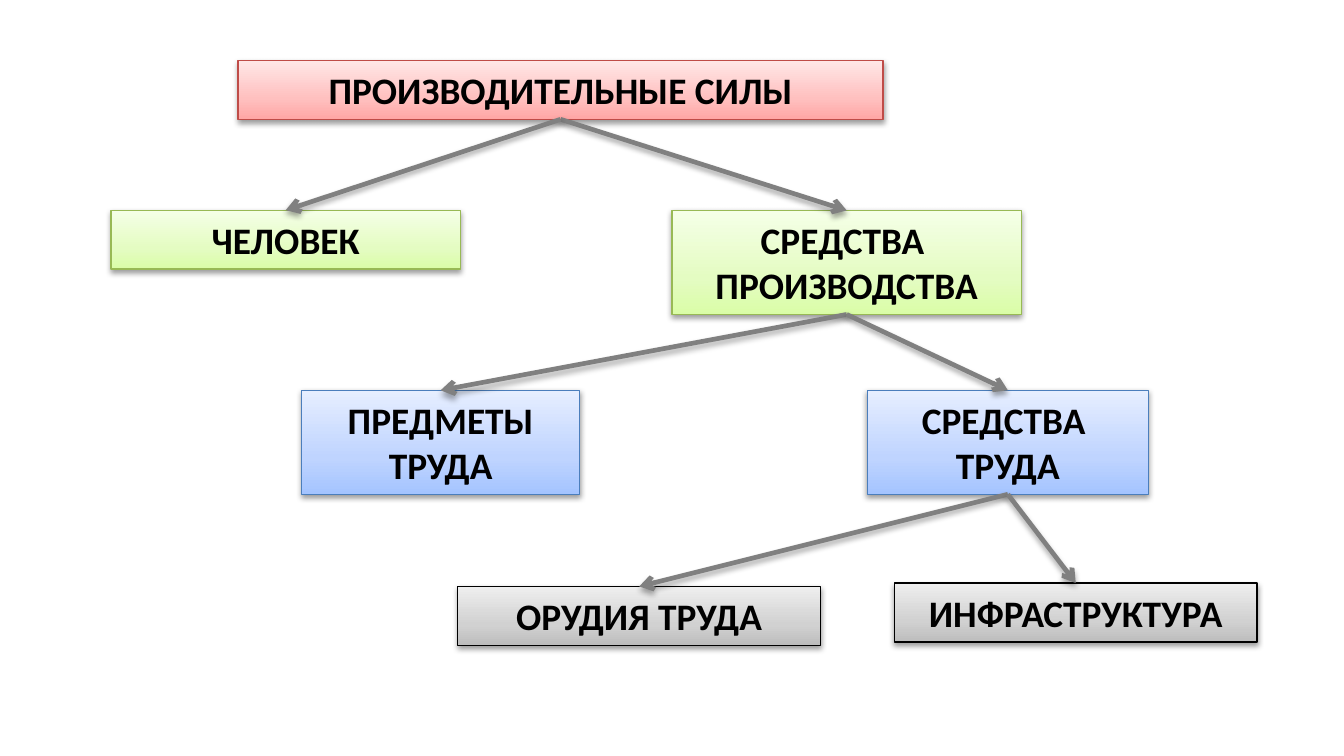
from dataclasses import dataclass

from lxml import etree
from pptx import Presentation
from pptx import util as u
from pptx.dml.color import RGBColor
from pptx.enum import shapes, text
from pptx.oxml.ns import qn


@dataclass(frozen=True)
class Style:
    line: str
    stops: tuple[str, str, str]


@dataclass(frozen=True)
class Theme:
    font: str = "Calibri"
    size: float = 20
    ink: str = "000000"
    arrow: str = "808080"
    arrow_width: float = 2.5
    border_width: float = 0.75
    red: Style = Style("BF4C48", ("FFA6A5", "FFC0BF", "FFE7E7"))
    green: Style = Style("98B955", ("DAFDA7", "E4FCC2", "F5FFE7"))
    blue: Style = Style("4B7EBC", ("A4C4FF", "BFD4FF", "E6EEFF"))
    gray: Style = Style("000000", ("BDBDBD", "D1D1D1", "EEEEEE"))


@dataclass(frozen=True)
class Box:
    key: str
    lines: tuple[str, ...]
    style: Style
    col: float
    row: float
    cols: float
    rows: float
    parent: str = ""


THEME = Theme()
WIDTH = u.Inches(10)
HEIGHT = u.Emu(WIDTH * 9 // 16)
COLUMNS = 100
CELL = WIDTH / COLUMNS
ONE_LINE, TWO_LINES = 4.38, 7.74
STOP_POSITIONS = (0, 35, 100)

BOXES = (
    Box("production", ("СРЕДСТВА ", "ПРОИЗВОДСТВА"), THEME.green,
        50, 15.66, 26, TWO_LINES, "forces"),
    Box("forces", ("ПРОИЗВОДИТЕЛЬНЫЕ СИЛЫ",), THEME.red, 17.72, 4.5, 48, ONE_LINE),
    Box("human", ("ЧЕЛОВЕК",), THEME.green, 8.26, 15.64, 26, ONE_LINE, "forces"),
    Box("objects", ("ПРЕДМЕТЫ ТРУДА",), THEME.blue,
        22.44, 29.04, 20.7, TWO_LINES, "production"),
    Box("means", ("СРЕДСТВА ", "ТРУДА"), THEME.blue,
        64.54, 29.04, 20.9, TWO_LINES, "production"),
    Box("tools", ("ОРУДИЯ ТРУДА",), THEME.gray, 34.06, 43.64, 27, ONE_LINE, "means"),
    Box("infrastructure", ("ИНФРАСТРУКТУРА",), THEME.gray,
        66.54, 43.38, 27, ONE_LINE, "means"),
)


def cells(n: float) -> u.Emu:
    return u.Emu(round(n * CELL))


def add_color(parent, value: str, alpha: int = 100) -> None:
    color = etree.SubElement(parent, qn("a:srgbClr"), val=value)
    if alpha < 100:
        etree.SubElement(color, qn("a:alpha"), val=str(alpha * 1000))


def add_shadow(sp_pr, distance: float, alpha: int) -> None:
    effects = sp_pr.find(qn("a:effectLst"))
    if effects is None:
        effects = etree.SubElement(sp_pr, qn("a:effectLst"))
    shadow = etree.SubElement(
        effects, qn("a:outerShdw"), blurRad=str(u.Pt(3.1)),
        dist=str(u.Pt(distance)), dir="5400000", rotWithShape="0")
    add_color(shadow, THEME.ink, alpha)


def fill_gradient(sp, colors: tuple[str, str, str]) -> None:
    sp.fill.gradient()
    sp.fill.gradient_angle = 90
    stops = sp.element.spPr.find(".//" + qn("a:gsLst"))
    for stop in list(stops):
        stops.remove(stop)
    for position, color in zip(STOP_POSITIONS, colors):
        stop = etree.SubElement(stops, qn("a:gs"), pos=str(position * 1000))
        add_color(stop, color)


def write_lines(sp, lines: tuple[str, ...]) -> None:
    tf = sp.text_frame
    tf.word_wrap = True
    tf.auto_size = text.MSO_AUTO_SIZE.SHAPE_TO_FIT_TEXT
    tf.vertical_anchor = text.MSO_ANCHOR.TOP
    for i, line in enumerate(lines):
        p = tf.add_paragraph() if i else tf.paragraphs[0]
        p.alignment = text.PP_ALIGN.CENTER
        r = p.add_run()
        r.text = line
        r.font.name = THEME.font
        r.font.size = u.Pt(THEME.size)
        r.font.bold = True
        r.font.color.rgb = RGBColor.from_string(THEME.ink)


def draw_box(s, box: Box):
    sp = s.shapes.add_shape(
        shapes.MSO_SHAPE.RECTANGLE, cells(box.col), cells(box.row),
        cells(box.cols), cells(box.rows))
    fill_gradient(sp, box.style.stops)
    sp.line.color.rgb = RGBColor.from_string(box.style.line)
    sp.line.width = u.Pt(THEME.border_width)
    sp.shadow.inherit = False
    add_shadow(sp.element.spPr, 1.6, 38)
    write_lines(sp, box.lines)
    return sp


def draw_arrow(s, parent, child) -> None:
    arrow = s.shapes.add_connector(shapes.MSO_CONNECTOR.STRAIGHT, 0, 0, 0, 0)
    arrow.begin_connect(parent, 2)
    arrow.end_connect(child, 0)
    arrow.line.color.rgb = RGBColor.from_string(THEME.arrow)
    arrow.line.width = u.Pt(THEME.arrow_width)
    sp_pr = arrow.element.spPr
    etree.SubElement(sp_pr.find(qn("a:ln")), qn("a:tailEnd"), type="arrow")
    add_shadow(sp_pr, 1.8, 35)


def main() -> None:
    prs = Presentation()
    prs.slide_width, prs.slide_height = WIDTH, HEIGHT
    s = prs.slides.add_slide(prs.slide_layouts[6])
    drawn = {box.key: draw_box(s, box) for box in BOXES}
    for box in BOXES:
        if box.parent:
            draw_arrow(s, drawn[box.parent], drawn[box.key])
    prs.save("out.pptx")


if __name__ == "__main__":
    main()
